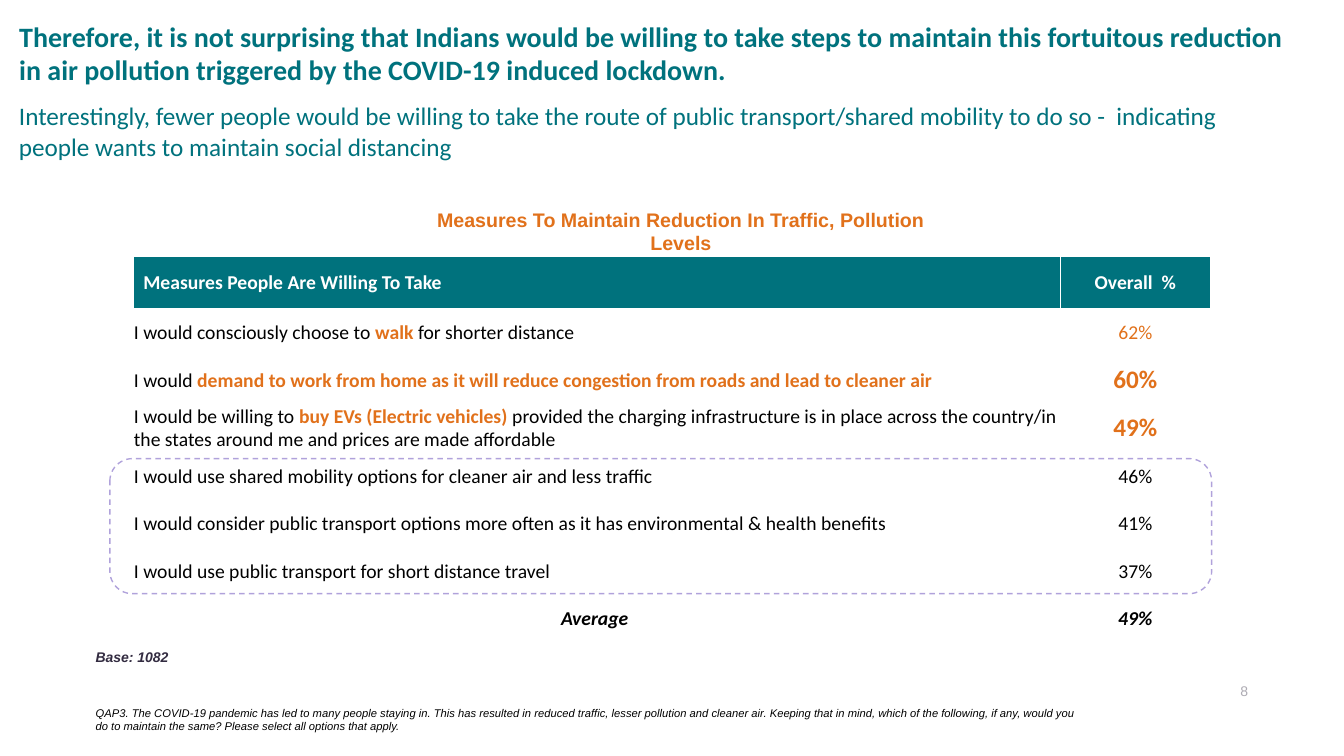
"""Build the slide on measures Indians would take to keep air pollution low."""
from dataclasses import dataclass, replace

from pptx import Presentation
from pptx.dml.color import RGBColor
from pptx.enum.dml import MSO_LINE_DASH_STYLE as Dash
from pptx.enum.shapes import MSO_SHAPE as Shape
from pptx.enum.text import MSO_ANCHOR as Anchor, PP_ALIGN as Align
from pptx.slide import Slide
from pptx.table import _Cell as Cell
from pptx.text.text import Font, TextFrame
from pptx.util import Pt

TEAL, ORANGE, BLACK, WHITE = "00727D", "E1711B", "000000", "FFFFFF"
INK, GREY, LILAC = "332C41", "ADABB3", "B0A2DB"


@dataclass(frozen=True)
class Style:
    size: float
    color: str = BLACK
    name: str = "Calibri"
    bold: bool = False
    italic: bool = False
    align: Align = Align.LEFT


@dataclass(frozen=True)
class Area:
    left: float
    top: float
    width: float
    height: float


@dataclass(frozen=True)
class Label:
    area: Area
    text: str
    style: Style


@dataclass(frozen=True)
class Measure:
    before: str
    stress: str
    after: str
    share: str
    share_style: Style


BODY = Style(14)
CENTERED = replace(BODY, align=Align.CENTER)
STRESSED = replace(CENTERED, size=18, color=ORANGE, bold=True)
AVERAGE = replace(CENTERED, bold=True, italic=True)
HEADER = replace(BODY, color=WHITE, bold=True)

TITLE = Label(
    Area(6.5, 10, 936.5, 80),
    "Therefore, it is not surprising that Indians would be willing to take steps to maintain "
    "this fortuitous reduction in air pollution triggered by the COVID-19 induced lockdown.",
    Style(20, TEAL, bold=True),
)
LABELS = [
    Label(Area(822, 484, 76.5, 19.5), "8", Style(10, GREY, "Arial", align=Align.RIGHT)),
    Label(
        Area(61.2, 501, 715, 26.5),
        "QAP3. The COVID-19 pandemic has led to many people staying in. This has resulted in "
        "reduced traffic, lesser pollution and cleaner air. Keeping that in mind, which of the "
        "following, if any, would you do to maintain the same? Please select all options that apply.",
        Style(8, name="Arial", italic=True),
    ),
    Label(Area(61.2, 459.5, 128, 19.5), "Base: 1082", Style(10, INK, "Arial", True, True)),
    Label(
        Area(295.2, 144.7, 382.3, 41),
        "Measures To Maintain Reduction In Traffic, Pollution Levels",
        Style(14, ORANGE, "Arial", bold=True, align=Align.CENTER),
    ),
    Label(
        Area(6.5, 68.4, 911.5, 51),
        "Interestingly, fewer people would be willing to take the route of public "
        "transport/shared mobility to do so -  indicating people wants to maintain social distancing",
        Style(18, TEAL),
    ),
]
MEASURES = [
    Measure("I would consciously choose to ", "walk", " for shorter distance", "62%",
            replace(CENTERED, color=ORANGE)),
    Measure("I would ", "demand to work from home as it will reduce congestion from roads "
            "and lead to cleaner air", "", "60%", STRESSED),
    Measure("I would be willing to ", "buy EVs (Electric vehicles) ",
            "provided the charging infrastructure is in place across the country/in the states "
            "around me and prices are made affordable", "49%", STRESSED),
    Measure("I would use shared mobility options for cleaner air and less traffic",
            "", "", "46%", CENTERED),
    Measure("I would consider public transport options more often as it has environmental "
            "& health benefits", "", "", "41%", CENTERED),
    Measure("I would use public transport for short distance travel", "", "", "37%", CENTERED),
]
TABLE_LEFT, TABLE_TOP = 95.2, 183
COLUMN_WIDTHS = (662.4, 106.8)
HEADER_HEIGHT, ROW_HEIGHT = 37.4, 34
HIGHLIGHT = Area(78.5, 327.6, 787, 96.5)


def rgb(color: str) -> RGBColor:
    return RGBColor.from_string(color)


def apply_style(font: Font, style: Style) -> None:
    font.name, font.size = style.name, Pt(style.size)
    font.bold, font.italic = style.bold, style.italic
    font.color.rgb = rgb(style.color)


def write(frame: TextFrame, text: str, style: Style) -> None:
    frame.word_wrap = True
    para = frame.paragraphs[0]
    para.text, para.alignment = text, style.align
    apply_style(para.font, style)


def lengths(area: Area) -> tuple[Pt, ...]:
    return Pt(area.left), Pt(area.top), Pt(area.width), Pt(area.height)


def add_title(page: Slide) -> None:
    title = page.shapes.title
    title.left, title.top, title.width, title.height = lengths(TITLE.area)
    title.text_frame.vertical_anchor = Anchor.TOP
    write(title.text_frame, TITLE.text, TITLE.style)


def add_label(page: Slide, label: Label) -> None:
    box = page.shapes.add_textbox(*lengths(label.area))
    write(box.text_frame, label.text, label.style)


def format_cell(cell: Cell, fill: str) -> None:
    cell.fill.solid()
    cell.fill.fore_color.rgb = rgb(fill)
    cell.vertical_anchor = Anchor.MIDDLE
    if fill == WHITE:
        cell.margin_left = cell.margin_right = cell.margin_top = Pt(0.5)
        cell.margin_bottom = Pt(0)


def write_measure(cell: Cell, measure: Measure) -> None:
    para = cell.text_frame.paragraphs[0]
    stress = replace(BODY, color=ORANGE, bold=True)
    parts = ((measure.before, BODY), (measure.stress, stress), (measure.after, BODY))
    for text, style in parts:
        if text:
            span = para.add_run()
            span.text = text
            apply_style(span.font, style)


def add_measures_table(page: Slide) -> None:
    count = len(MEASURES) + 2
    height = HEADER_HEIGHT + ROW_HEIGHT * (count - 1)
    area = Area(TABLE_LEFT, TABLE_TOP, sum(COLUMN_WIDTHS), height)
    table = page.shapes.add_table(count, 2, *lengths(area)).table
    table.horz_banding = False
    for column, width in zip(table.columns, COLUMN_WIDTHS):
        column.width = Pt(width)
    for index, row in enumerate(table.rows):
        row.height = Pt(ROW_HEIGHT if index else HEADER_HEIGHT)
        for cell in row.cells:
            format_cell(cell, WHITE if index else TEAL)
    write(table.cell(0, 0).text_frame, "Measures People Are Willing To Take", HEADER)
    write(table.cell(0, 1).text_frame, "Overall  %", replace(HEADER, align=Align.CENTER))
    for index, measure in enumerate(MEASURES, start=1):
        write_measure(table.cell(index, 0), measure)
        write(table.cell(index, 1).text_frame, measure.share, measure.share_style)
    for column, text in enumerate(("Average ", "49%")):
        write(table.cell(count - 1, column).text_frame, text, AVERAGE)


def add_highlight(page: Slide) -> None:
    outline = page.shapes.add_shape(Shape.ROUNDED_RECTANGLE, *lengths(HIGHLIGHT))
    outline.shadow.inherit = False
    outline.fill.background()
    outline.line.color.rgb = rgb(LILAC)
    outline.line.width = Pt(1)
    outline.line.dash_style = Dash.DASH


def main() -> None:
    deck = Presentation()
    deck.slide_width, deck.slide_height = Pt(960), Pt(540)
    page = deck.slides.add_slide(deck.slide_layouts[5])
    add_title(page)
    add_measures_table(page)
    for label in LABELS:
        add_label(page, label)
    add_highlight(page)
    deck.save("out.pptx")


if __name__ == "__main__":
    main()
